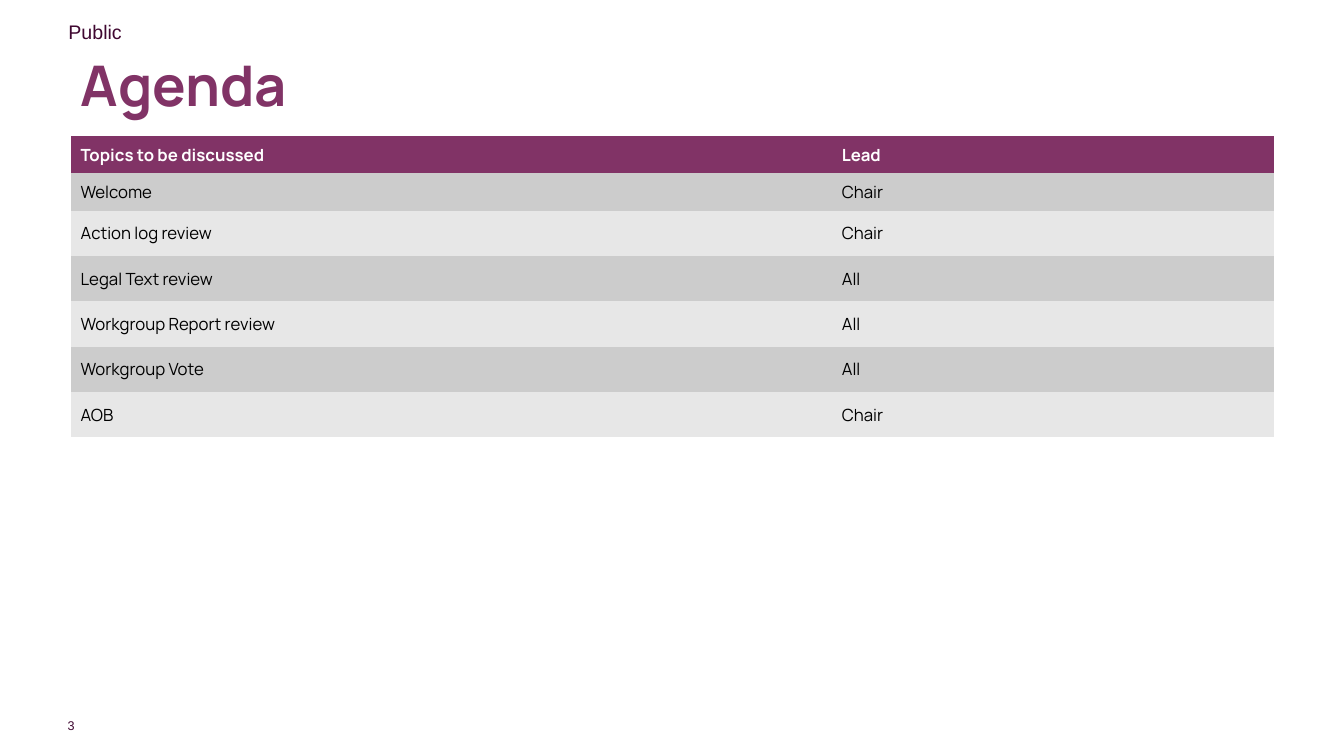
from pptx import Presentation
from pptx.dml.color import RGBColor
from pptx.enum.text import MSO_ANCHOR as Anchor, PP_ALIGN as Align
from pptx.util import Inches, Pt

PLUM = "813366"
NO_GRID_STYLE = "{2D5ABB26-0587-4C30-8999-92F81FD0307C}"


def rgb(code):
    return RGBColor.from_string(code)


def write(frame, text, size, color, font="Manrope", bold=False,
          align=Align.LEFT, anchor=Anchor.MIDDLE, spacing=1.0):
    frame.vertical_anchor = anchor
    paragraph = frame.paragraphs[0]
    paragraph.alignment = align
    paragraph.line_spacing = spacing
    run = paragraph.add_run()
    run.text = text
    run.font.name = font
    run.font.size = Pt(size)
    run.font.bold = bold
    run.font.color.rgb = rgb(color)


deck = Presentation()
deck.slide_width, deck.slide_height = Inches(13.33), Inches(7.5)
slide = deck.slides.add_slide(deck.slide_layouts[5])

title = slide.shapes.title
title.left, title.top = Inches(0.7), Inches(0.4)
title.width, title.height = Inches(10.62), Inches(0.95)
write(title.text_frame, "Agenda", 40, PLUM, bold=True, spacing=0.9)

marking = slide.shapes.add_textbox(Inches(0.58), Inches(0.15), Inches(5), Inches(0.34)).text_frame
marking.word_wrap = True
write(marking, "Public", 14, "3F0730", font="Arial", anchor=Anchor.TOP)

page_number = slide.shapes.add_textbox(Inches(0.59), Inches(7.12), Inches(0.15), Inches(0.15)).text_frame
page_number.margin_left = page_number.margin_right = 0
page_number.margin_top = page_number.margin_bottom = 0
page_number.word_wrap = False
write(page_number, "3", 9, "3F0731", font="Arial", align=Align.RIGHT)

topics = [
    ("Topics to be discussed", "Lead"),
    ("Welcome", "Chair"),
    ("Action log review", "Chair"),
    ("Legal Text review", "All"),
    ("Workgroup Report review", "All"),
    ("Workgroup Vote", "All"),
    ("AOB", "Chair"),
]
agenda = slide.shapes.add_table(
    len(topics), 2, Inches(0.7), Inches(1.35), Inches(11.94), Inches(3)).table
agenda._tbl.tblPr[0].text = NO_GRID_STYLE
agenda.columns[0].width, agenda.columns[1].width = Inches(7.55), Inches(4.39)

for row, entries in enumerate(topics):
    header = row == 0
    agenda.rows[row].height = Inches(0.37 if row < 2 else 0.45)
    band = PLUM if header else ("E7E7E7", "CCCCCC")[row % 2]
    for column, entry in enumerate(entries):
        cell = agenda.cell(row, column)
        cell.fill.solid()
        cell.fill.fore_color.rgb = rgb(band)
        cell.vertical_anchor = Anchor.MIDDLE
        write(cell.text_frame, entry, 12, "FFFFFF" if header else "000000",
              bold=header, anchor=None)

deck.save("out.pptx")
